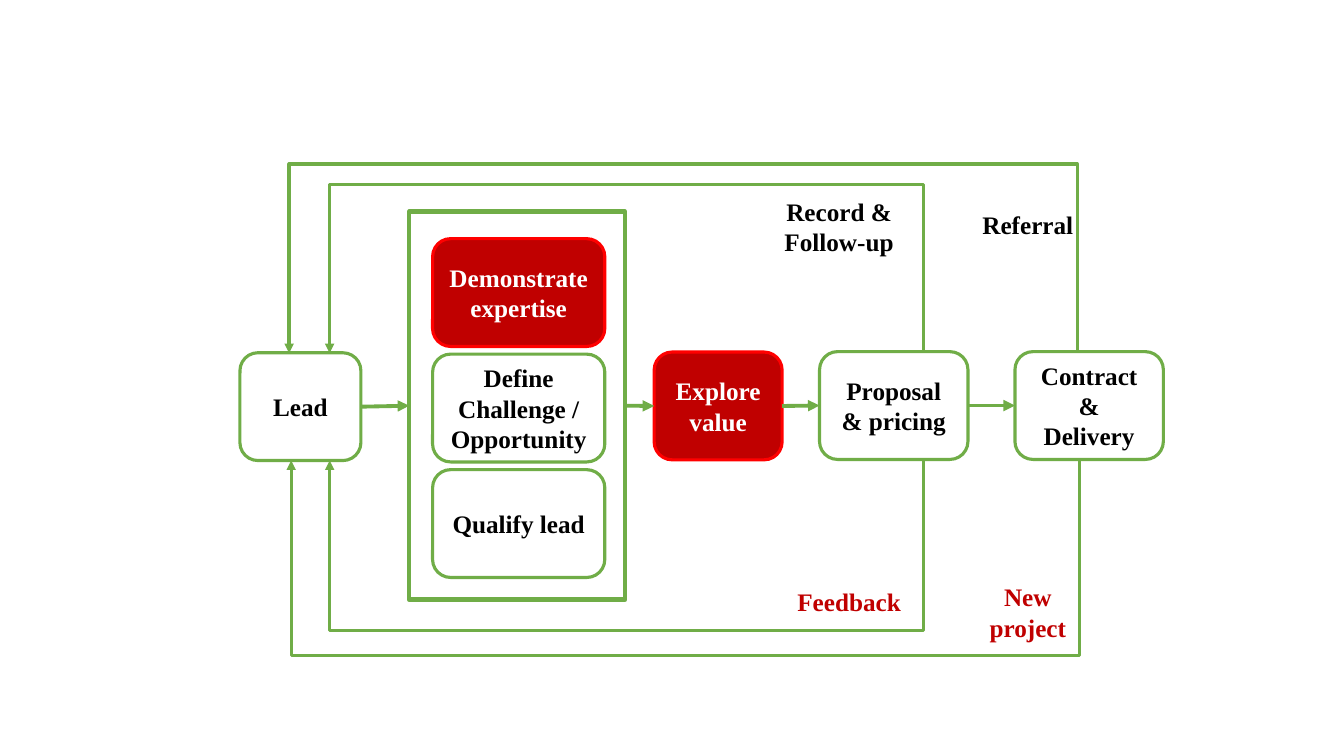
from lxml.etree import SubElement
from pptx import Presentation
from pptx.dml.color import RGBColor
from pptx.enum.shapes import MSO_CONNECTOR, MSO_SHAPE
from pptx.enum.text import MSO_ANCHOR, MSO_AUTO_SIZE, PP_ALIGN
from pptx.oxml.ns import qn
from pptx.util import Pt

COLORS = {"green": "70AD47", "dark_red": "C00000", "red": "FF0000",
          "white": "FFFFFF", "black": "000000"}
TOP, BOTTOM, LEFT, RIGHT = 0, 2, 1, 3
BOX_H = 77


def rgb(name):
    return RGBColor.from_string(COLORS[name])


def write(tf, text, color):
    tf.word_wrap = True
    p = tf.paragraphs[0]
    p.text = text
    p.alignment = PP_ALIGN.CENTER
    p.font.name = "Times New Roman"
    p.font.size = Pt(18)
    p.font.bold = True
    p.font.color.rgb = rgb(color)


def add_box(s, text, x, y, w, highlight=False):
    sp = s.shapes.add_shape(MSO_SHAPE.ROUNDED_RECTANGLE,
                            Pt(x), Pt(y), Pt(w), Pt(BOX_H))
    sp.shadow.inherit = False
    sp.fill.solid()
    sp.fill.fore_color.rgb = rgb("dark_red" if highlight else "white")
    sp.line.color.rgb = rgb("red" if highlight else "green")
    sp.line.width = Pt(2.25)
    sp.text_frame.vertical_anchor = MSO_ANCHOR.MIDDLE
    write(sp.text_frame, text, "white" if highlight else "black")
    return sp


def add_frame(s, x, y, w, h):
    sp = s.shapes.add_shape(MSO_SHAPE.RECTANGLE, Pt(x), Pt(y), Pt(w), Pt(h))
    sp.shadow.inherit = False
    sp.fill.background()
    sp.line.color.rgb = rgb("green")
    sp.line.width = Pt(3.25)
    return sp


def add_label(s, text, x, y, w, h, color):
    tf = s.shapes.add_textbox(Pt(x), Pt(y), Pt(w), Pt(h)).text_frame
    write(tf, text, color)
    tf.auto_size = MSO_AUTO_SIZE.SHAPE_TO_FIT_TEXT


def style_arrow(line, width):
    line.line.color.rgb = rgb("green")
    line.line.width = Pt(width)
    SubElement(line.line._get_or_add_ln(), qn("a:tailEnd"), type="triangle")
    SubElement(line._element.spPr, qn("a:effectLst"))


def add_arrow(s, start, end):
    line = s.shapes.add_connector(MSO_CONNECTOR.STRAIGHT, 0, 0, 0, 0)
    line.begin_connect(start, RIGHT)
    line.end_connect(end, LEFT)
    style_arrow(line, 2.75)


def add_loop(s, from_x, to_x, y, turn_y):
    span, drop = from_x - to_x, 1
    left = (from_x + to_x - drop) / 2
    top = y + (drop - span) / 2
    corners = [Pt(v) for v in (left, top, left + drop, top + span)]
    above = turn_y < y
    if above:
        corners = corners[2:] + corners[:2]
    line = s.shapes.add_connector(MSO_CONNECTOR.ELBOW, *corners)
    spPr = line._element.spPr
    spPr.find(qn("a:xfrm")).set("rot", str((270 if above else 90) * 60000))
    guides = spPr.find(qn("a:prstGeom")).find(qn("a:avLst"))
    bend = round((turn_y - y) / drop * 100000)
    SubElement(guides, qn("a:gd"), name="adj1", fmla=f"val {bend}")
    style_arrow(line, 2.25)


def main():
    prs = Presentation()
    prs.slide_width, prs.slide_height = Pt(960), Pt(540)
    s = prs.slides.add_slide(prs.slide_layouts[6])

    lead = add_box(s, "Lead", 171.4, 252, 86.4)
    steps = [("Demonstrate expertise", True),
             ("Define Challenge / Opportunity", False),
             ("Qualify lead", False)]
    for i, (text, highlight) in enumerate(steps):
        add_box(s, text, 309, 170.5 + i * 82.5, 123, highlight)
    explore = add_box(s, "Explore value", 467.3, 251.5, 91.4, True)
    proposal = add_box(s, "Proposal & pricing", 585.4, 251.2, 106)
    contract = add_box(s, "Contract & Delivery", 725, 251.2, 106)
    frame = add_frame(s, 292.3, 151.2, 154.1, 277.2)

    chain = [lead, frame, explore, proposal, contract]
    for start, end in zip(chain, chain[1:]):
        add_arrow(s, start, end)

    for loop in [(771, 208, 328, 469.5), (769.5, 206.5, 251.2, 116),
                 (659.5, 235.5, 251.2, 131), (659.5, 235.5, 328, 451.5)]:
        add_loop(s, *loop)

    for label in [("New project", 691, 412, 86.4, 51, "dark_red"),
                  ("Referral", 691, 146, 86.4, 29, "black"),
                  ("Record & Follow-up", 545, 136.8, 108.7, 51, "black"),
                  ("Feedback", 552.2, 415.5, 108.7, 29, "dark_red")]:
        add_label(s, *label)

    prs.save("out.pptx")


if __name__ == "__main__":
    main()
